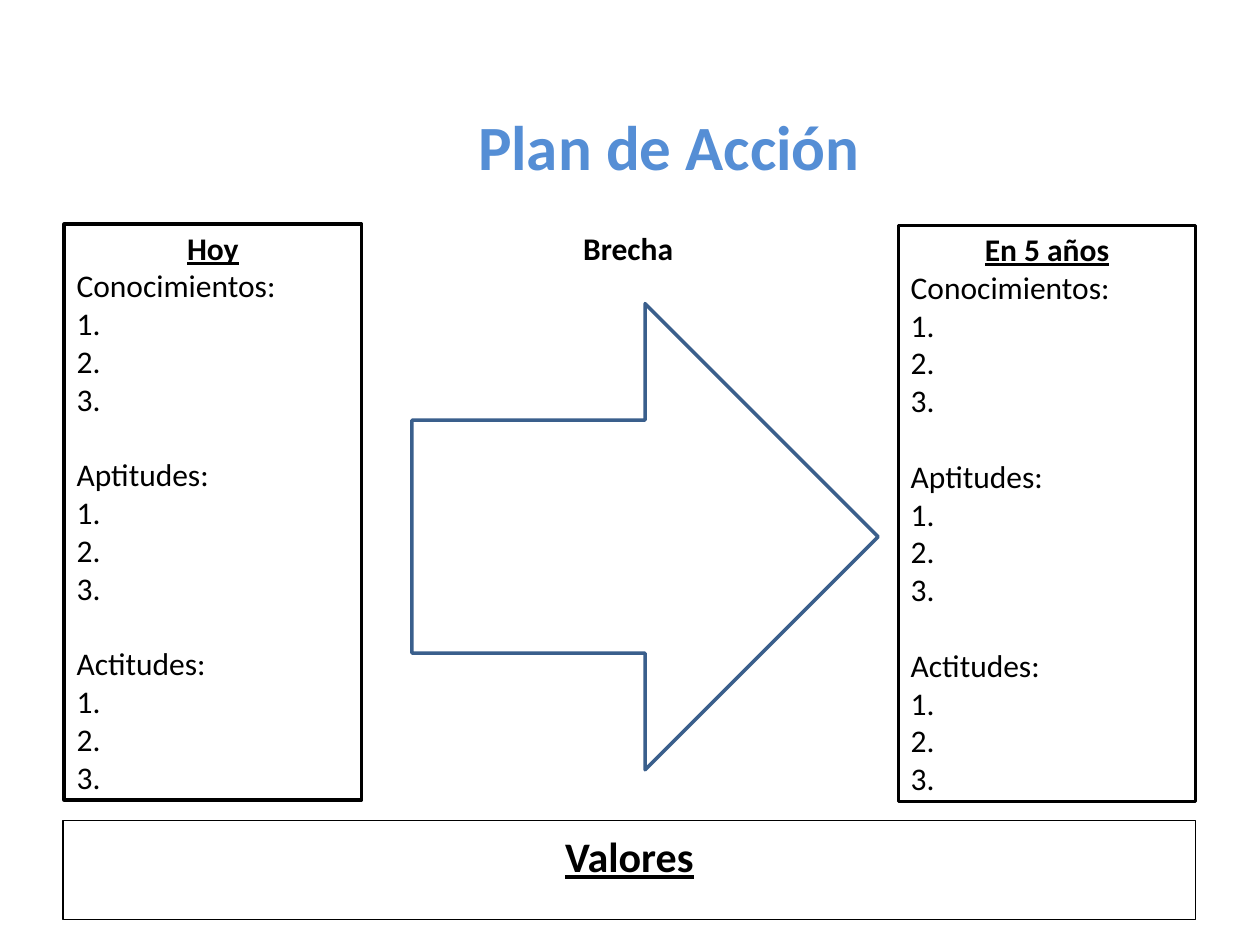
from pptx import Presentation
from pptx.dml.color import RGBColor
from pptx.enum.shapes import MSO_SHAPE as Shape
from pptx.enum.text import MSO_ANCHOR as Anchor, PP_ALIGN as Align
from pptx.util import Inches, Pt

BLACK = RGBColor(0x00, 0x00, 0x00)
BLUE = RGBColor(0x55, 0x8E, 0xD5)
NAVY = RGBColor(0x3A, 0x5F, 0x8C)

BODY = {"name": "Calibri", "size": Pt(18), "bold": False, "underline": False}
HEAD = BODY | {"bold": True, "underline": True}
LABEL = BODY | {"bold": True}


def write(para, text, style, color=BLACK, align=Align.CENTER):
    para.alignment = align
    run = para.add_run()
    run.text = text
    for key, value in style.items():
        setattr(run.font, key, value)
    run.font.color.rgb = color


def outline(kind, box, color, width):
    shape = slide.shapes.add_shape(kind, *map(Inches, box))
    shape.shadow.inherit = False
    shape.fill.background()
    shape.line.color.rgb = color
    shape.line.width = Pt(width)
    shape.text_frame.word_wrap = True
    return shape


prs = Presentation()
prs.slide_width, prs.slide_height = Inches(10), Inches(7.5)
slide = prs.slides.add_slide(prs.slide_layouts[5])

# Title
title = slide.shapes.title
title.left, title.top = Inches(1.61), Inches(0.84)
title.width, title.height = Inches(7.4), Inches(0.63)
title.text_frame.vertical_anchor = Anchor.MIDDLE
write(title.text_frame.paragraphs[0], "Plan de Acción",
      LABEL | {"size": Pt(36)}, BLUE)

# Values bar
bar = outline(Shape.RECTANGLE, (0.5, 6.51, 8.99, 0.79), BLACK, 0.75)
frame = bar.text_frame
frame.vertical_anchor = Anchor.TOP
frame.margin_top = Inches(0.08)
write(frame.paragraphs[0], "Valores", HEAD | {"size": Pt(24)})

# Today and future columns
for name, left, top in (("Hoy", 0.51, 1.78), ("En 5 años", 7.13, 1.79)):
    frame = outline(Shape.RECTANGLE, (left, top, 2.36, 4.57), BLACK, 2).text_frame
    frame.vertical_anchor = Anchor.MIDDLE
    write(frame.paragraphs[0], name, HEAD)
    for i, topic in enumerate(("Conocimientos:", "Aptitudes:", "Actitudes:")):
        for text in (topic, "1.", "2.", "3."):
            para = frame.add_paragraph()
            if i and text == topic:
                para.space_before = Inches(0.3)
            write(para, text, BODY, align=Align.LEFT)

# Gap arrow and its label
outline(Shape.RIGHT_ARROW, (3.27, 2.41, 3.7, 3.7), NAVY, 2)
label = slide.shapes.add_textbox(*map(Inches, (4.53, 1.77, 0.92, 0.4)))
label.text_frame.word_wrap = False
write(label.text_frame.paragraphs[0], "Brecha", LABEL, align=Align.LEFT)

prs.save("out.pptx")
